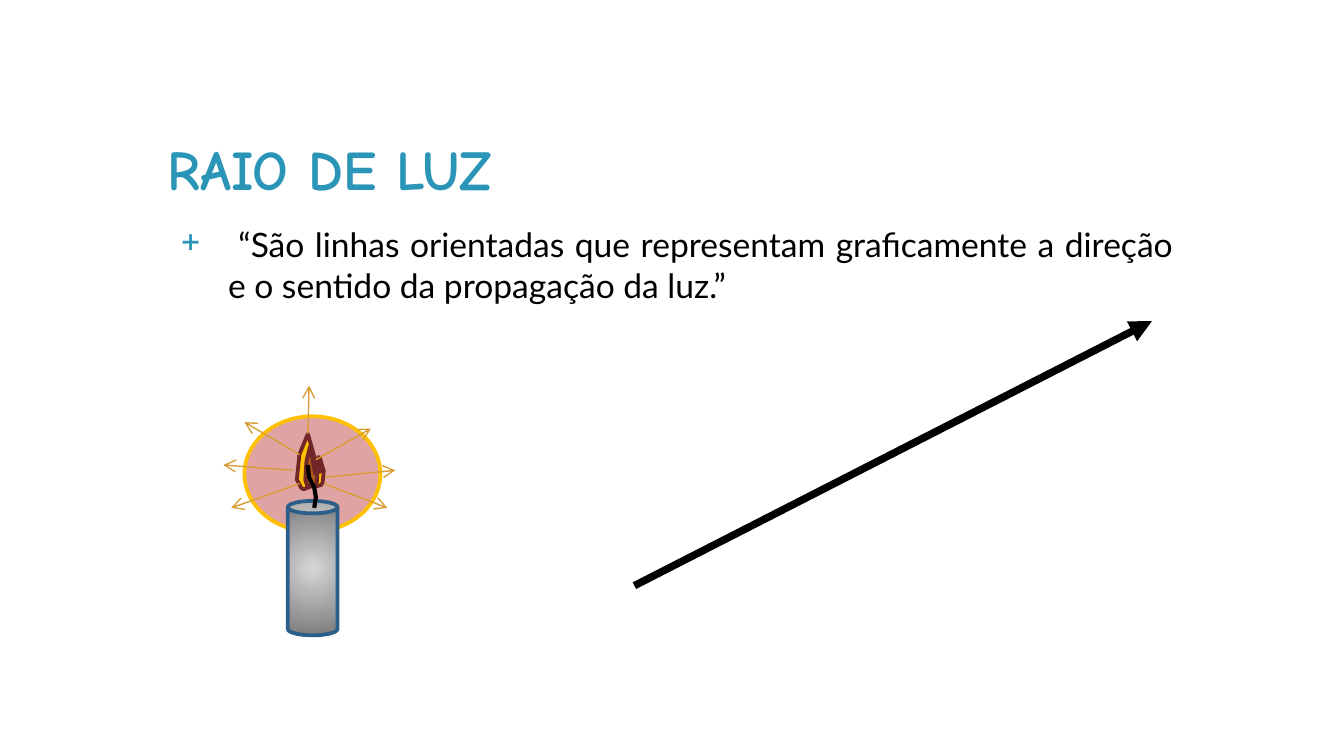
from lxml import etree
from pptx import Presentation
from pptx.dml.color import RGBColor
from pptx.enum.shapes import MSO_CONNECTOR as CONN, MSO_SHAPE as SHAPE
from pptx.enum.text import MSO_ANCHOR as ANCHOR, PP_ALIGN as ALIGN
from pptx.oxml import parse_xml
from pptx.oxml.ns import nsdecls, qn
from pptx.util import Cm, Pt

COLORS = {
    "accent": "2A95B7", "ink": "000000", "glow": "E0A3A3", "flame": "FFC000",
    "core": "AF5715", "flame_edge": "712627", "ray": "D79D34",
    "wax_light": "D7D7D7", "wax_dark": "797979", "wax_edge": "2B5F8A",
}
TITLE_FONT = {"name": "Comic Neue", "size": Pt(30), "bold": True}
BODY_FONT = {"name": "Lato", "size": Pt(18), "bold": False}
RAYS = [
    ((5.66, 8.59), (4.62, 7.98)), ((5.54, 8.89), (4.22, 8.79)),
    ((5.82, 8.2), (5.84, 7.29)), ((5.97, 8.69), (7.01, 8.1)),
    ((6.15, 9.02), (7.47, 8.89)), ((5.66, 9.14), (4.37, 9.6)),
    ((6.12, 9.14), (7.32, 9.6)),
]
FLAME = [
    (5.89, 9.19), (5.74, 9.25), (5.69, 9.22), (5.64, 9.12), (5.61, 9.07),
    (5.66, 8.59), (5.82, 8.2), (5.97, 8.74), (6.02, 8.89), (6.05, 8.92),
    (6.05, 8.84), (6.02, 8.64), (6.05, 8.66), (6.1, 8.84), (6.12, 8.89),
    (6.1, 9.12), (6.07, 9.17), (5.99, 9.19),
]
WICK = [(5.94, 9.6), (5.97, 9.4), (5.94, 9.22), (5.84, 9.02), (5.82, 8.79)]


def rgb(name):
    return RGBColor.from_string(COLORS[name])


def set_line(shape, color, width):
    shape.line.color.rgb = rgb(color)
    shape.line.width = Pt(width)


def place(shape, box):
    for name, value in zip(("left", "top", "width", "height"), box):
        setattr(shape, name, Cm(value))


def write_text(shape, text, font, color, anchor):
    tf = shape.text_frame
    tf.word_wrap = True
    tf.vertical_anchor = anchor
    for side in ("left", "top", "right", "bottom"):
        setattr(tf, f"margin_{side}", Cm(0.25))
    p = tf.paragraphs[0]
    r = p.add_run()
    r.text = text
    for name, value in font.items():
        setattr(r.font, name, value)
    r.font.color.rgb = rgb(color)
    return p


def add_bullet(p, char, color):
    pPr = p._p.get_or_add_pPr()
    pPr.set("marL", str(Cm(1.14)))
    pPr.set("indent", str(-Cm(0.89)))
    clr = etree.SubElement(pPr, qn("a:buClr"))
    etree.SubElement(clr, qn("a:srgbClr"), val=COLORS[color])
    etree.SubElement(pPr, qn("a:buChar"), char=char)


def add_arrow(shapes, start, end, color, width, head):
    points = [Cm(v) for v in (*start, *end)]
    c = shapes.add_connector(CONN.STRAIGHT, *points)
    set_line(c, color, width)
    etree.SubElement(c.line._get_or_add_ln(), qn("a:tailEnd"), type=head)
    etree.SubElement(c._element.spPr, qn("a:effectLst"))


def add_preset(shapes, kind, box, edge):
    sp = shapes.add_shape(kind, *[Cm(v) for v in box])
    sp.shadow.inherit = False
    set_line(sp, edge, 2)
    return sp


def add_outline(shapes, points, edge, width, fill=None):
    start, *rest = [(Cm(x), Cm(y)) for x, y in points]
    builder = shapes.build_freeform(*start)
    builder.add_line_segments(rest, close=fill is not None)
    sp = builder.convert_to_shape()
    sp.shadow.inherit = False
    if fill:
        sp.fill.solid()
        sp.fill.fore_color.rgb = rgb(fill)
    else:
        sp.fill.background()
    set_line(sp, edge, width)


def fill_radial(sp, inner, outer):
    sp.fill.background()
    spPr = sp._element.spPr
    gradient = parse_xml(
        f'<a:gradFill {nsdecls("a")}><a:gsLst>'
        f'<a:gs pos="0"><a:srgbClr val="{COLORS[inner]}"/></a:gs>'
        f'<a:gs pos="100000"><a:srgbClr val="{COLORS[outer]}"/></a:gs>'
        '</a:gsLst><a:path path="circle">'
        '<a:fillToRect l="50000" t="50000" r="50000" b="50000"/>'
        '</a:path></a:gradFill>')
    spPr.replace(spPr.find(qn("a:noFill")), gradient)


def add_candle(s):
    shapes = s.shapes.add_group_shape().shapes
    glow = add_preset(shapes, SHAPE.OVAL, (4.62, 7.87, 2.57, 2.18), "flame")
    glow.fill.solid()
    glow.fill.fore_color.rgb = rgb("glow")
    core = [(5.77 + (x - 5.61) * 0.45, 8.43 + (y - 8.2) * 0.74) for x, y in FLAME]
    add_outline(shapes, FLAME, "flame_edge", 2, "flame")
    add_outline(shapes, core, "flame_edge", 2, "core")
    for start, end in RAYS:
        add_arrow(shapes, start, end, "ray", 0.75, "arrow")
    wax = add_preset(shapes, SHAPE.CAN, (5.44, 9.47, 0.94, 2.54), "wax_edge")
    fill_radial(wax, "wax_light", "wax_dark")
    add_outline(shapes, WICK, "ink", 2.25)


def main():
    prs = Presentation()
    prs.slide_width, prs.slide_height = Cm(25.4), Cm(14.29)
    s = prs.slides.add_slide(prs.slide_layouts[5])

    title = s.shapes.title
    place(title, (2.92, 2.21, 19.51, 2.08))
    p = write_text(title, "RAIO DE LUZ", TITLE_FONT, "accent", ANCHOR.MIDDLE)
    p.alignment = ALIGN.LEFT
    p.line_spacing = 0.9

    body = s.shapes.add_textbox(*[Cm(v) for v in (2.92, 3.99, 19.51, 1.9)])
    p = write_text(
        body,
        " “São linhas orientadas que representam graficamente a direção "
        "e o sentido da propagação da luz.”",
        BODY_FONT, "ink", ANCHOR.TOP)
    p.alignment = ALIGN.JUSTIFY
    add_bullet(p, "+", "accent")

    add_arrow(s.shapes, (11.99, 11.07), (21.77, 6.07), "ink", 4, "triangle")
    add_candle(s)
    prs.save("out.pptx")


if __name__ == "__main__":
    main()
